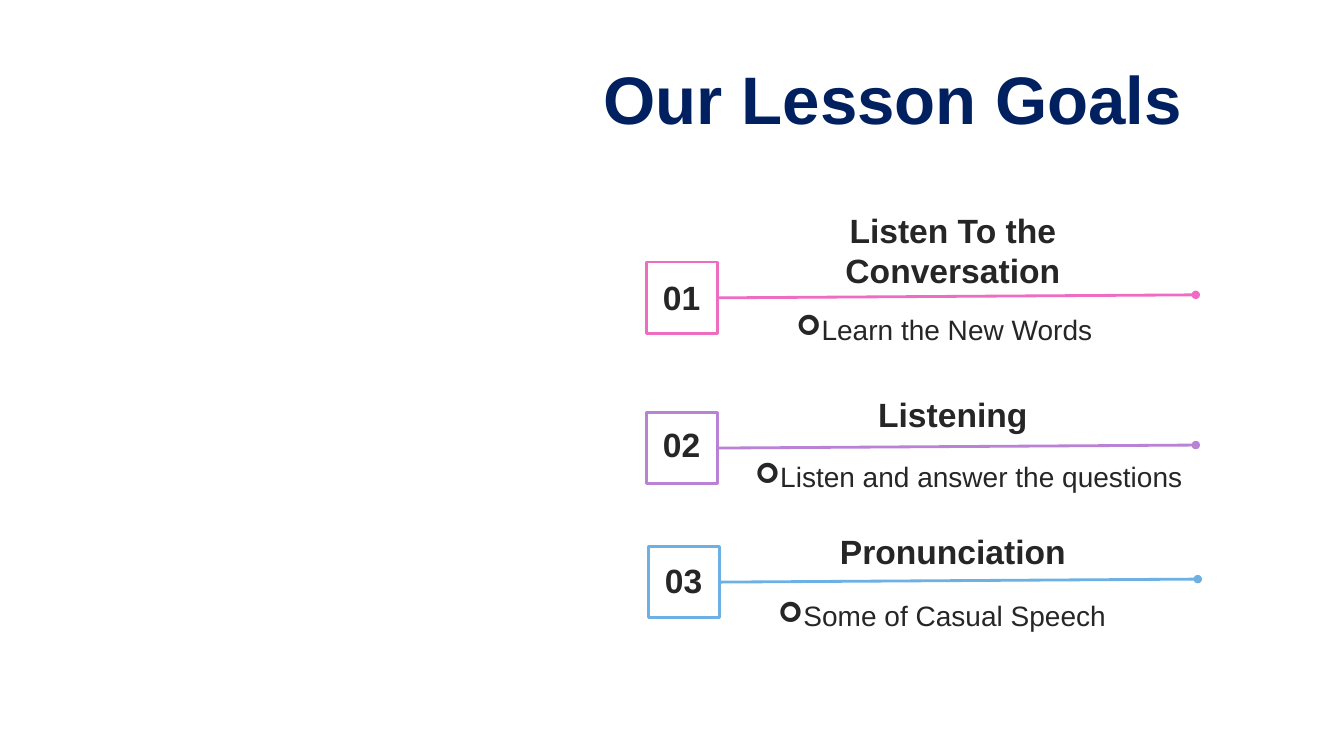
from lxml import etree
from pptx import Presentation
from pptx.dml.color import RGBColor
from pptx.enum.shapes import MSO_CONNECTOR as Connector, MSO_SHAPE as Shape
from pptx.enum.text import MSO_ANCHOR as Anchor, PP_ALIGN as Align
from pptx.oxml.ns import qn
from pptx.util import Inches, Pt

NAVY = RGBColor(0x00, 0x20, 0x60)
INK = RGBColor(0x26, 0x26, 0x26)
WHITE = RGBColor(0xFF, 0xFF, 0xFF)
PINK = RGBColor(0xEE, 0x6C, 0xC1)
PURPLE = RGBColor(0xB9, 0x82, 0xD5)
BLUE = RGBColor(0x6D, 0xB0, 0xE4)

BOX_SIDE = 0.71
RULE_WIDTH = 4.73
RULE_RISE = 0.03
HEADING_LEFT, HEADING_WIDTH = 7.54, 3.82
LINE_HEIGHT = 0.5


def write(holder, text, size, color, bold, align):
    holder.text_frame.text = text
    paragraph = holder.text_frame.paragraphs[0]
    paragraph.alignment = align
    font = paragraph.runs[0].font
    font.name, font.size, font.bold = "Arial", Pt(size), bold
    font.color.rgb = color
    return paragraph


def add_label(left, top, width, height, text, size, bold, align, inset):
    label = slide.shapes.add_textbox(*map(Inches, (left, top, width, height)))
    frame = label.text_frame
    frame.word_wrap = True
    frame.margin_left = frame.margin_right = Inches(inset)
    return write(label, text, size, INK, bold, align)


prs = Presentation()
prs.slide_width, prs.slide_height = Inches(13.33), Inches(7.5)
slide = prs.slides.add_slide(prs.slide_layouts[5])

title = slide.shapes.title
title.left, title.top, title.width, title.height = map(Inches, (5.8, 0.51, 6.03, 0.91))
title.text_frame.vertical_anchor = Anchor.MIDDLE
write(title, "Our Lesson Goals", 48, NAVY, True, Align.RIGHT)

goals = [
    ("Listen To the Conversation", 2.03, 2 * LINE_HEIGHT - 0.09,
     "Learn the New Words", 7.8, 3.05, 3.58, PINK, 6.41, 2.6, 2.7),
    ("Listening", 3.86, LINE_HEIGHT,
     "Listen and answer the questions", 7.39, 4.51, 4.47, PURPLE, 6.41, 4.09, 4.16),
    ("Pronunciation", 5.22, LINE_HEIGHT,
     "Some of Casual Speech", 7.62, 5.89, 3.79, BLUE, 6.43, 5.42, 5.51),
]

for number, (heading, heading_top, heading_height, task, task_left, task_top,
             task_width, color, box_left, box_top, number_top) in enumerate(goals, 1):
    add_label(HEADING_LEFT, heading_top, HEADING_WIDTH, heading_height,
              heading, 24, True, Align.CENTER, 0.12)

    task_line = add_label(task_left, task_top, task_width, 0.44,
                          task, 20, False, Align.LEFT, 0.1)
    bullet_props = task_line._p.get_or_add_pPr()
    bullet_props.set("marL", str(Inches(0.25)))
    bullet_props.set("indent", str(-Inches(0.25)))
    etree.SubElement(bullet_props, qn("a:buFont"), typeface="Wingdings")
    etree.SubElement(bullet_props, qn("a:buChar"), char="➢")

    rule_left = box_left + BOX_SIDE + 0.01
    rule_top = box_top + BOX_SIDE / 2
    rule = slide.shapes.add_connector(
        Connector.STRAIGHT,
        *map(Inches, (rule_left, rule_top, rule_left + RULE_WIDTH, rule_top - RULE_RISE)))
    rule.line.color.rgb = color
    rule.line.width = Pt(2)
    etree.SubElement(rule.line._get_or_add_ln(), qn("a:tailEnd"), type="oval")
    etree.SubElement(rule._element.spPr, qn("a:effectLst"))

    box = slide.shapes.add_shape(
        Shape.RECTANGLE, *map(Inches, (box_left, box_top, BOX_SIDE, BOX_SIDE)))
    box.shadow.inherit = False
    box.fill.solid()
    box.fill.fore_color.rgb = WHITE
    box.line.color.rgb = color
    box.line.width = Pt(2)

    add_label(box_left + 0.04, number_top, 0.62, LINE_HEIGHT,
              f"{number:02d}", 24, True, Align.CENTER, 0.12)

prs.save("out.pptx")
